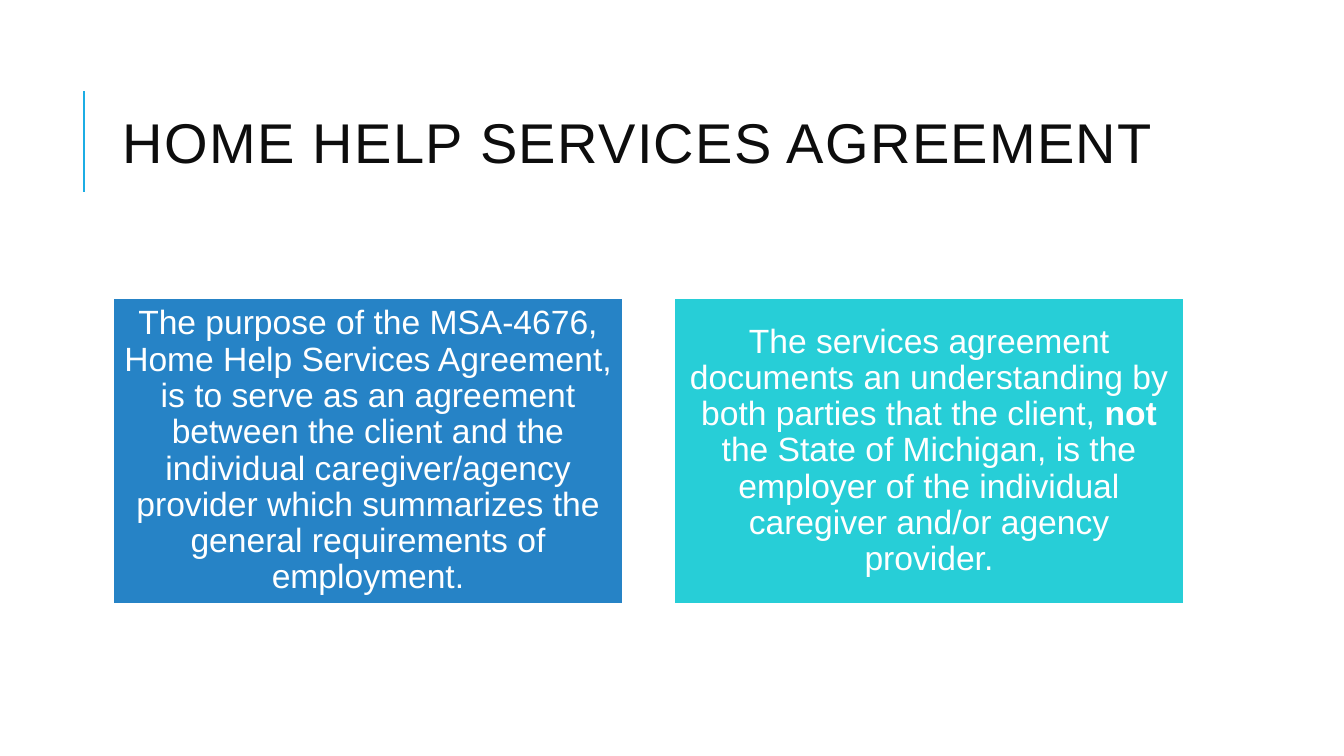
import pptx
import pptx.dml.color
import pptx.enum.shapes
import pptx.enum.text
import pptx.oxml.ns
import pptx.util
import lxml.etree

PX = 914400 / 100.8
COLORS = {
    "accent": "1CADE4",
    "heading": "0D0D0D",
    "purpose": "2683C6",
    "understanding": "27CED7",
    "white": "FFFFFF",
}


def px(length):
    return pptx.util.Emu(round(length * PX))


def write(frame, runs, size, color, align, line_spacing, inset, tracking=0):
    frame.word_wrap = True
    frame.auto_size = pptx.enum.text.MSO_AUTO_SIZE.NONE
    frame.vertical_anchor = pptx.enum.text.MSO_ANCHOR.MIDDLE
    frame.margin_left = frame.margin_right = px(inset)
    frame.margin_top = frame.margin_bottom = px(inset)
    paragraph = frame.paragraphs[0]
    paragraph.alignment = align
    paragraph.line_spacing = line_spacing
    for text, bold in runs:
        run = paragraph.add_run()
        run.text = text
        run.font.name = "Arial"
        run.font.size = pptx.util.Pt(size)
        run.font.bold = bold
        run.font.color.rgb = pptx.dml.color.RGBColor.from_string(COLORS[color])
        if tracking:
            run.font._element.set("spc", str(tracking * 100))


presentation = pptx.Presentation()
presentation.slide_width = px(1344)
presentation.slide_height = px(756)
slide = presentation.slides.add_slide(presentation.slide_layouts[5])

accent = slide.shapes.add_connector(
    pptx.enum.shapes.MSO_CONNECTOR.STRAIGHT, px(84), px(192), px(84), px(91)
)
accent.line.color.rgb = pptx.dml.color.RGBColor.from_string(COLORS["accent"])
accent.line.width = pptx.util.Pt(1.5)
lxml.etree.SubElement(accent._element.spPr, pptx.oxml.ns.qn("a:effectLst"))

heading = slide.shapes.title
heading.left, heading.top, heading.width, heading.height = px(113), px(65), px(1072), px(165)
write(
    heading.text_frame,
    [("HOME HELP SERVICES AGREEMENT", False)],
    size=40,
    color="heading",
    align=pptx.enum.text.PP_ALIGN.LEFT,
    line_spacing=0.8,
    inset=10,
    tracking=1,
)

statements = [
    ("purpose", [
        ("The purpose of the MSA-4676, Home Help Services Agreement, is to serve as an "
         "agreement between the client and the individual caregiver/agency provider "
         "which summarizes the general requirements of employment.", False),
    ]),
    ("understanding", [
        ("The services agreement documents an understanding by both parties that the client, ", False),
        ("not ", True),
        ("the State of Michigan, is the employer of the individual caregiver and/or "
         "agency provider.", False),
    ]),
]
for index, (topic, runs) in enumerate(statements):
    panel = slide.shapes.add_shape(
        pptx.enum.shapes.MSO_SHAPE.RECTANGLE, px(113 + index * 561), px(298), px(510), px(306)
    )
    panel.shadow.inherit = False
    panel.fill.solid()
    panel.fill.fore_color.rgb = pptx.dml.color.RGBColor.from_string(COLORS[topic])
    panel.line.color.rgb = pptx.dml.color.RGBColor.from_string(COLORS["white"])
    panel.line.width = pptx.util.Pt(1.25)
    write(
        panel.text_frame,
        runs,
        size=24,
        color="white",
        align=pptx.enum.text.PP_ALIGN.CENTER,
        line_spacing=0.9,
        inset=10,
    )

presentation.save("out.pptx")
